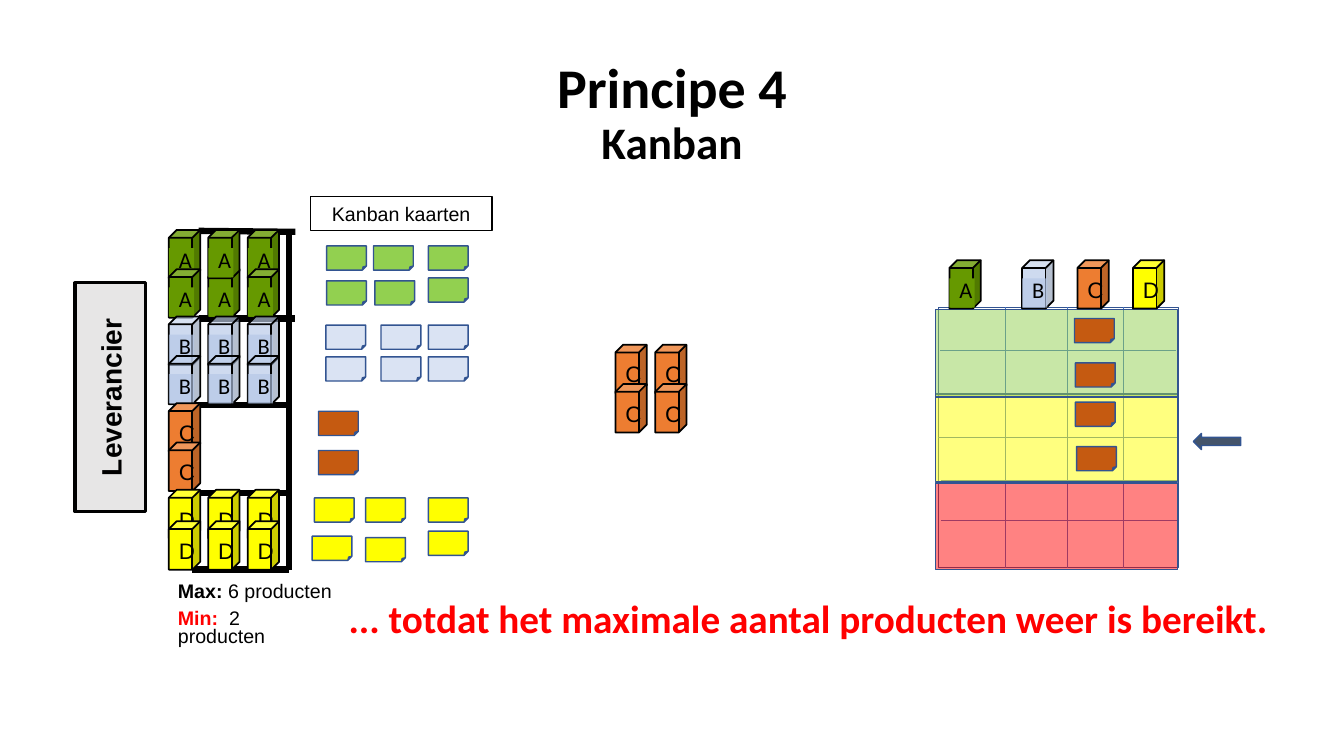
"""Build the Kanban slide: supplier rack, kanban cards, crates in transit and demand board."""
from dataclasses import dataclass
from typing import Any, Optional

import pptx
import pptx.dml.color
import pptx.enum.shapes
import pptx.enum.text
import pptx.oxml.ns
import pptx.util
from lxml import etree

Pt = pptx.util.Pt
Shape = pptx.enum.shapes.MSO_SHAPE
Align = pptx.enum.text.PP_ALIGN
Anchor = pptx.enum.text.MSO_ANCHOR
qn = pptx.oxml.ns.qn


@dataclass(frozen=True)
class Theme:
    black: str = "000000"
    red: str = "FF0000"
    yellow: str = "FFFF00"
    green: str = "92D050"
    outline: str = "325491"
    grid: str = "4472C4"
    arrow: str = "44546A"
    supplier: str = "E7E6E6"
    heading_font: str = "Calibri"
    label_font: str = "Arial"
    title_size: float = 40
    subtitle_size: float = 32.2
    message_size: float = 28
    supplier_size: float = 20
    crate_size: float = 16
    note_size: float = 14


THEME = Theme()


@dataclass(frozen=True)
class Product:
    letter: str
    crate_fill: str
    card_fill: str
    font: str = THEME.label_font
    opacity: int = 100
    label_filled: bool = False


@dataclass(frozen=True)
class Box:
    left: float
    top: float
    width: float
    height: float


@dataclass(frozen=True)
class Line:
    x1: float
    y1: float
    x2: float
    y2: float


@dataclass(frozen=True)
class Zone:
    top: float
    height: float
    fill: str
    opacity: int


@dataclass(frozen=True)
class Piece:
    product: Product
    left: float
    top: float


A = Product("A", "669900", THEME.green, THEME.heading_font, label_filled=True)
B = Product("B", "B4C7E7", "DAE3F3", THEME.heading_font, 65, True)
C = Product("C", "ED7D31", "C55A11")
D = Product("D", THEME.yellow, THEME.yellow)

RACK_COLUMNS = [120.6 + 28.2 * column for column in range(3)]
RACK_LINES = [Line(141.8, 164.9, 211, 165.6), Line(141.8, 227.5, 211, 227.5)]
RACK_LINES += [Line(137.5, y, 206.6, y) for y in (289.4, 352.1, 406.8)]
RACK_LINES += [Line(206.6, 164.9, 206.6, 406.8)]

STOCK = [Piece(A, RACK_COLUMNS[1], 192.3)]
STOCK += [Piece(A, left, 164.2) for left in RACK_COLUMNS]
STOCK += [Piece(A, left, 192.3) for left in RACK_COLUMNS[::2]]
STOCK += [Piece(B, left, top) for top in (226.1, 254.2) for left in RACK_COLUMNS]
STOCK += [Piece(C, RACK_COLUMNS[0], top) for top in (288, 316.1)]
STOCK += [Piece(D, left, top) for top in (349.9, 372.3) for left in RACK_COLUMNS]

TRANSIT = [Piece(C, left, top) for top in (246.2, 274.3) for left in (439.6, 468)]
DEMAND = [Piece(product, left, 185.8) for product, left in
          ((A, 678.2), (B, 730.1), (C, 769.7), (D, 809.3))]

CARD_SPOTS: dict[Product, list[tuple[float, float]]] = {
    A: [(233.3, 175.7), (266.8, 175.7), (306, 175.7),
        (233.3, 200.6), (267.8, 200.6), (306, 198.5)],
    B: [(232.8, 232.2), (272.2, 232.2), (306, 232.2),
        (232.8, 254.9), (272.2, 254.9), (306, 254.9)],
    C: [(227.5, 293.8), (227.5, 321.8),
        (767.5, 227.5), (768.2, 259.2), (768.2, 287.3), (769, 319)],
    D: [(224.6, 355.7), (261.2, 355.7), (306, 355.7),
        (223, 383), (261.2, 384), (306, 379.4)],
}
CARDS = [Piece(product, *spot) for product, spots in CARD_SPOTS.items() for spot in spots]

BOARD = Box(670.3, 219.6, 171.4, 185.8)
BOARD_LINES = [Line(671.8, y, 840.2, y) for y in (250.6, 280.8)]
BOARD_LINES += [Line(672.5, y, 841.7, y) for y in (343.4, 371.5)]
BOARD_LINES += [Line(x, 219.6, x, 405.4) for x in (717.8, 762.5, 802.1)]
ZONES = [Zone(344.9, 61.9, THEME.red, 49), Zone(281.5, 62.6, THEME.yellow, 50),
         Zone(221, 62.6, THEME.green, 50)]


def rgb(value: str) -> pptx.dml.color.RGBColor:
    return pptx.dml.color.RGBColor.from_string(value)


def place(item: Any, box: Box) -> None:
    item.left, item.top = Pt(box.left), Pt(box.top)
    item.width, item.height = Pt(box.width), Pt(box.height)


def draw_shape(shapes: Any, kind: Any, box: Box, fill: Optional[str] = None,
               line: Optional[str] = THEME.outline, weight: float = 1, opacity: int = 100) -> Any:
    shape = shapes.add_shape(kind, Pt(box.left), Pt(box.top), Pt(box.width), Pt(box.height))
    shape.shadow.inherit = False
    if fill:
        shape.fill.solid()
        shape.fill.fore_color.rgb = rgb(fill)
        if opacity < 100:
            color = shape.fill._xPr.find(qn("a:solidFill"))[0]
            etree.SubElement(color, qn("a:alpha")).set("val", str(opacity * 1000))
    else:
        shape.fill.background()
    if line:
        shape.line.color.rgb = rgb(line)
        shape.line.width = Pt(weight)
    else:
        shape.line.fill.background()
    return shape


def draw_line(shapes: Any, line: Line, color: str, weight: float) -> Any:
    connector = shapes.add_connector(pptx.enum.shapes.MSO_CONNECTOR.STRAIGHT, Pt(line.x1),
                                     Pt(line.y1), Pt(line.x2), Pt(line.y2))
    connector.line.color.rgb = rgb(color)
    connector.line.width = Pt(weight)
    etree.SubElement(connector._element.spPr, qn("a:effectLst"))
    return connector


def add_run(paragraph: Any, text: str, size: float, font: str = THEME.label_font,
            color: str = THEME.black, bold: bool = False) -> None:
    run = paragraph.add_run()
    run.text = text
    run.font.size, run.font.name, run.font.bold = Pt(size), font, bold
    run.font.color.rgb = rgb(color)


def draw_crate(shapes: Any, crate: Piece) -> None:
    product = crate.product
    group = shapes.add_group_shape().shapes
    draw_shape(group, Shape.CUBE, Box(crate.left, crate.top, 22.4, 34.6), product.crate_fill,
               THEME.black, 1.25, product.opacity)
    label = draw_shape(group, Shape.RECTANGLE, Box(crate.left, crate.top + 13, 18, 20.9),
                       product.crate_fill if product.label_filled else None, None,
                       opacity=product.opacity)
    frame = label.text_frame
    frame.word_wrap, frame.vertical_anchor = True, Anchor.TOP
    paragraph = frame.paragraphs[0]
    paragraph.alignment, paragraph.line_spacing = Align.CENTER, 0.7
    add_run(paragraph, product.letter, THEME.crate_size, product.font)


def draw_card(shapes: Any, card: Piece) -> None:
    draw_shape(shapes, Shape.FOLDED_CORNER, Box(card.left, card.top, 28.4, 17.3),
               card.product.card_fill)


def draw_board(shapes: Any) -> None:
    board = draw_shape(shapes, Shape.RECTANGLE, BOARD)
    for line in BOARD_LINES:
        draw_line(shapes, line, THEME.grid, 0.5)
    middle = BOARD.top + BOARD.height / 2
    midline = draw_line(shapes, Line(BOARD.left, middle, BOARD.left + BOARD.width, middle),
                        THEME.grid, 0.5)
    midline.begin_connect(board, 1)
    midline.end_connect(board, 3)
    for zone in ZONES:
        draw_shape(shapes, Shape.RECTANGLE, Box(668.2, zone.top, 172.8, zone.height),
                   zone.fill, opacity=zone.opacity)


def draw_labels(shapes: Any) -> None:
    supplier = draw_shape(shapes, Shape.RECTANGLE, Box(-2.9, 258.5, 163.4, 50.4),
                          THEME.supplier, THEME.black, 2.25)
    supplier.rotation = 270
    cards_label = draw_shape(shapes, Shape.RECTANGLE, Box(221.8, 140.4, 129.6, 24.5),
                             line=THEME.black)
    for shape, text, size, bold in ((supplier, "Leverancier", THEME.supplier_size, True),
                                    (cards_label, "Kanban kaarten", THEME.note_size, False)):
        shape.text_frame.word_wrap = False
        paragraph = shape.text_frame.paragraphs[0]
        paragraph.alignment = Align.CENTER
        add_run(paragraph, text, size, bold=bold)

    limits = shapes.add_textbox(Pt(120), Pt(414), Pt(124.2), Pt(39.6)).text_frame
    limits.word_wrap = True
    rows = (("Max: ", "6 producten", THEME.black), ("Min: ", " 2 producten", THEME.red))
    for index, (name, amount, color) in enumerate(rows):
        paragraph = limits.add_paragraph() if index else limits.paragraphs[0]
        paragraph.line_spacing, paragraph.space_after = Pt(13), Pt(6)
        add_run(paragraph, name, THEME.note_size, color=color, bold=True)
        add_run(paragraph, amount, THEME.note_size)


def fill_placeholder(placeholder: Any, box: Box, lines: list[tuple[str, float]],
                     color: str, anchor: Any) -> None:
    place(placeholder, box)
    frame = placeholder.text_frame
    frame.word_wrap, frame.vertical_anchor = True, anchor
    frame.auto_size = pptx.enum.text.MSO_AUTO_SIZE.NONE
    for index, (text, size) in enumerate(lines):
        paragraph = frame.add_paragraph() if index else frame.paragraphs[0]
        properties = paragraph._p.get_or_add_pPr()
        properties.set("marL", "0")
        properties.set("indent", "0")
        etree.SubElement(properties, qn("a:buNone"))
        paragraph.alignment, paragraph.line_spacing = Align.CENTER, 0.9
        paragraph.space_before = Pt(0)
        add_run(paragraph, text, size, THEME.heading_font, color, True)


def main() -> None:
    deck = pptx.Presentation()
    deck.slide_width, deck.slide_height = Pt(960), Pt(540)
    slide = deck.slides.add_slide(deck.slide_layouts[1])
    shapes = slide.shapes
    fill_placeholder(shapes.title, Box(0, 34.6, 960, 94.3),
                     [("Principe 4", THEME.title_size), ("Kanban", THEME.subtitle_size)],
                     THEME.black, Anchor.MIDDLE)
    fill_placeholder(slide.placeholders[1], Box(224.6, 424.8, 704.9, 67.7),
                     [("... totdat het maximale aantal producten weer is bereikt.",
                       THEME.message_size)], THEME.red, Anchor.TOP)
    for line in RACK_LINES:
        draw_line(shapes, line, THEME.black, 4.5)
    draw_board(shapes)
    for crate in STOCK + TRANSIT + DEMAND:
        draw_crate(shapes, crate)
    for card in CARDS:
        draw_card(shapes, card)
    draw_shape(shapes, Shape.LEFT_ARROW, Box(852.5, 309.6, 33.8, 11.5), THEME.arrow)
    draw_labels(shapes)
    deck.save("out.pptx")


if __name__ == "__main__":
    main()
